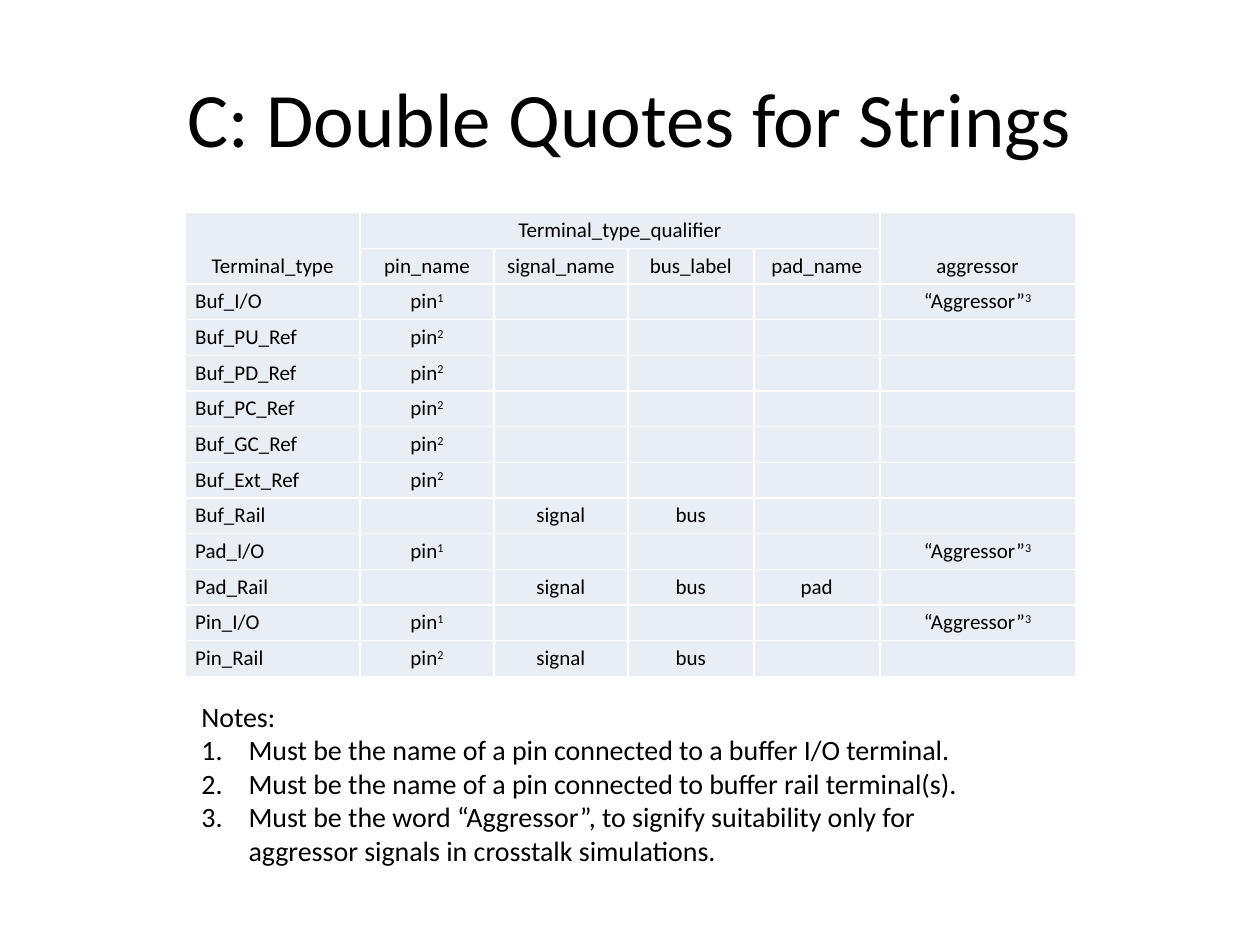
from lxml import etree
from pptx import Presentation
from pptx import util as u
from pptx.dml import color
from pptx.enum import text
from pptx.oxml import ns

Pt = u.Pt
CENTER, LEFT = text.PP_ALIGN.CENTER, text.PP_ALIGN.LEFT


def rgb(value):
    return color.RGBColor.from_string(value)


def write(paragraph, content, size=12, align=LEFT, after=0, ink="000000"):
    paragraph.alignment = align
    paragraph.space_after = Pt(after)
    for number, line in enumerate(content.split("\n")):
        if number:
            paragraph.add_line_break()
        for level, part in enumerate(line.split("^")):
            if part:
                run = paragraph.add_run()
                run.text = part
                run.font.size = Pt(size)
                run.font.name = "Calibri"
                run.font.color.rgb = rgb(ink)
                if level:
                    run._r.get_or_add_rPr().set("baseline", "30000")
    if not content:
        etree.SubElement(paragraph._p, ns.qn("a:endParaRPr"), sz=str(size * 100))


prs = Presentation()
prs.slide_width, prs.slide_height = Pt(720), Pt(540)
slide = prs.slides.add_slide(prs.slide_layouts[5])

title = slide.shapes.title
title.left, title.top, title.width, title.height = Pt(36), Pt(21.6), Pt(648), Pt(90)
title.text_frame.vertical_anchor = text.MSO_ANCHOR.MIDDLE
write(title.text_frame.paragraphs[0], "C: Double Quotes for Strings", size=44, align=CENTER)

terminals = [
    ["Terminal_type", "Terminal_type_qualifier", "", "", "", "aggressor"],
    ["", "pin_name", "signal_name", "bus_label", "pad_name", ""],
    ["Buf_I/O", "pin^1", "", "", "", "“Aggressor”^3"],
    ["Buf_PU_Ref", "pin^2", "", "", "", ""],
    ["Buf_PD_Ref", "pin^2", "", "", "", ""],
    ["Buf_PC_Ref", "pin^2", "", "", "", ""],
    ["Buf_GC_Ref", "pin^2", "", "", "", ""],
    ["Buf_Ext_Ref", "pin^2", "", "", "", ""],
    ["Buf_Rail", "", "signal", "bus", "", ""],
    ["Pad_I/O", "pin^1", "", "", "", "“Aggressor”^3"],
    ["Pad_Rail", "", "signal", "bus", "pad", ""],
    ["Pin_I/O", "pin^1", "", "", "", "“Aggressor”^3"],
    ["Pin_Rail", "pin^2", "signal", "bus", "", ""],
]
widths = [100, 76.5, 76.5, 72, 72, 111.8]
row_height = 20.2
table = slide.shapes.add_table(
    len(terminals), len(widths), Pt(105.8), Pt(121.5),
    Pt(sum(widths)), Pt(row_height * len(terminals))).table
table.first_row = table.horz_banding = False
for column, width in zip(table.columns, widths):
    column.width = Pt(width)

for r, entries in enumerate(terminals):
    table.rows[r].height = Pt(row_height)
    for c, entry in enumerate(entries):
        cell = table.cell(r, c)
        cell.margin_left = cell.margin_right = Pt(5.76)
        cell.margin_top = cell.margin_bottom = Pt(2.88)
        cell.fill.solid()
        cell.fill.fore_color.rgb = rgb("E9EDF4")
        for position, side in enumerate(("lnL", "lnR", "lnT", "lnB")):
            border = etree.Element(ns.qn("a:" + side), w=str(Pt(1)))
            paint = etree.SubElement(border, ns.qn("a:solidFill"))
            etree.SubElement(paint, ns.qn("a:srgbClr"), val="FFFFFF")
            cell._tc.get_or_add_tcPr().insert(position, border)
        write(cell.text_frame.paragraphs[0], entry, after=4,
              align=LEFT if c == 0 and r > 1 else CENTER)

table.cell(0, 1).merge(table.cell(0, 4))
for c in (0, 5):
    table.cell(0, c).merge(table.cell(1, c))
    table.cell(0, c).vertical_anchor = text.MSO_ANCHOR.BOTTOM

notes = slide.shapes.add_textbox(Pt(108), Pt(396), Pt(452), Pt(104.4)).text_frame
notes.word_wrap = False
notes.auto_size = text.MSO_AUTO_SIZE.SHAPE_TO_FIT_TEXT
write(notes.paragraphs[0], "Notes:", size=16)
for note in (
    "Must be the name of a pin connected to a buffer I/O terminal.",
    "Must be the name of a pin connected to buffer rail terminal(s).",
    "Must be the word “Aggressor”, to signify suitability only for\n"
    "aggressor signals in crosstalk simulations.",
):
    paragraph = notes.add_paragraph()
    write(paragraph, note, size=16)
    layout = paragraph._p.get_or_add_pPr()
    layout.set("marL", str(Pt(27)))
    layout.set("indent", str(-Pt(27)))
    etree.SubElement(layout, ns.qn("a:buFont"), typeface="+mj-lt")
    etree.SubElement(layout, ns.qn("a:buAutoNum"), type="arabicPeriod")

prs.save("out.pptx")
